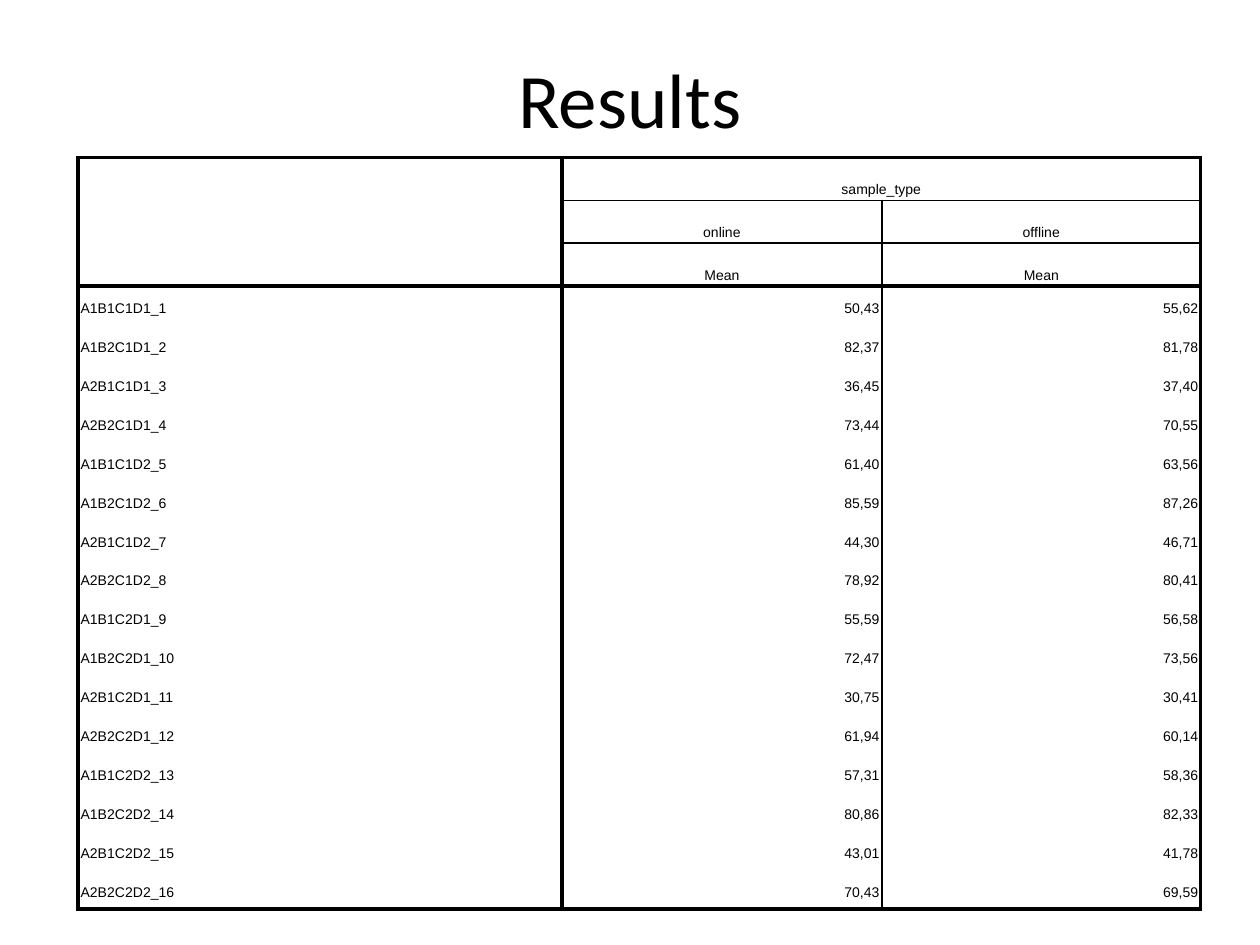
from dataclasses import dataclass
from itertools import product

from lxml.etree import SubElement
from pptx import Presentation
from pptx.dml.color import RGBColor
from pptx.enum.text import MSO_ANCHOR, PP_ALIGN
from pptx.oxml.ns import qn
from pptx.util import Inches, Pt

W, H = 10, 7.5
BLACK, WHITE = "000000", "FFFFFF"
THICK, THIN = 2.25, 1
COL_WIDTHS = (3.84, 2.54, 2.53)
HEADER_ROWS, HEADER_HEIGHT = 3, 0.33
TABLE_HEIGHT = 5.94


@dataclass
class Result:
    label: str
    online: str
    offline: str


ONLINE = ("50,43 82,37 36,45 73,44 61,40 85,59 44,30 78,92 "
          "55,59 72,47 30,75 61,94 57,31 80,86 43,01 70,43").split()
OFFLINE = ("55,62 81,78 37,40 70,55 63,56 87,26 46,71 80,41 "
           "56,58 73,56 30,41 60,14 58,36 82,33 41,78 69,59").split()
LABELS = [f"A{a}B{b}C{c}D{d}_{n}"
          for n, (c, d, a, b) in enumerate(product((1, 2), repeat=4), 1)]
RESULTS = [Result(*row) for row in zip(LABELS, ONLINE, OFFLINE)]
HEADERS = [("", "sample_type", ""), ("", "online", "offline"), ("", "Mean", "Mean")]
ROWS = HEADERS + [(r.label, r.online, r.offline) for r in RESULTS]


def color(value: str) -> RGBColor:
    return RGBColor.from_string(value)


def write(tf, text: str, *, size: float, font: str, align=PP_ALIGN.LEFT, spacing=None) -> None:
    p = tf.paragraphs[0]
    p.alignment = align
    if spacing:
        p.line_spacing = Pt(spacing)
    if text:
        r = p.add_run()
        r.text = text
        r.font.size, r.font.name, r.font.bold = Pt(size), font, False
        r.font.color.rgb = color(BLACK)


def horizontal_rule(y: int, col: int) -> float:
    if y in (0, HEADER_ROWS, len(ROWS)):
        return THICK
    return THIN if y < HEADER_ROWS and col else 0


def vertical_rule(x: int, row: int) -> float:
    if x == 2:
        return THIN if row else 0
    return THICK


def draw_border(cell, side: str, width: float) -> None:
    ln = SubElement(cell._tc.get_or_add_tcPr(), qn(f"a:ln{side}"), w=str(Pt(width)))
    if not width:
        SubElement(ln, qn("a:noFill"))
        return
    fill = SubElement(ln, qn("a:solidFill"))
    SubElement(fill, qn("a:srgbClr"), val=BLACK)


def draw_cell(cell, text: str, row: int, col: int) -> None:
    header = row < HEADER_ROWS
    cell.margin_left = cell.margin_right = cell.margin_top = cell.margin_bottom = Inches(0.02)
    cell.vertical_anchor = MSO_ANCHOR.BOTTOM if header else MSO_ANCHOR.TOP
    align = PP_ALIGN.CENTER if header else PP_ALIGN.RIGHT if col else PP_ALIGN.LEFT
    write(cell.text_frame, text, size=8, font="Arial", align=align, spacing=16)
    right = len(COL_WIDTHS) if cell.is_merge_origin else col + 1
    draw_border(cell, "L", vertical_rule(col, row))
    draw_border(cell, "R", vertical_rule(right, row))
    draw_border(cell, "T", horizontal_rule(row, col))
    draw_border(cell, "B", horizontal_rule(row + 1, col))
    cell.fill.solid()
    cell.fill.fore_color.rgb = color(WHITE)


def draw_title(s, text: str) -> None:
    sp = s.shapes.add_textbox(Inches(0.05 * W), 0, Inches(0.9 * W), Inches(1.55))
    tf = sp.text_frame
    tf.word_wrap = True
    tf.vertical_anchor = MSO_ANCHOR.MIDDLE
    write(tf, text, size=44, font="Calibri", align=PP_ALIGN.CENTER)


def draw_table(s) -> None:
    table = s.shapes.add_table(len(ROWS), len(COL_WIDTHS), Inches(0.62), Inches(1.25),
                               Inches(sum(COL_WIDTHS)), Inches(TABLE_HEIGHT)).table
    table.first_row = table.horz_banding = False
    for column, width in zip(table.columns, COL_WIDTHS):
        column.width = Inches(width)
    body_height = (TABLE_HEIGHT - HEADER_ROWS * HEADER_HEIGHT) / len(RESULTS)
    table.cell(0, 1).merge(table.cell(0, 2))
    for i, texts in enumerate(ROWS):
        table.rows[i].height = Inches(HEADER_HEIGHT if i < HEADER_ROWS else body_height)
        for j, text in enumerate(texts):
            draw_cell(table.cell(i, j), text, i, j)


def main() -> None:
    prs = Presentation()
    prs.slide_width, prs.slide_height = Inches(W), Inches(H)
    s = prs.slides.add_slide(prs.slide_layouts[6])
    draw_title(s, "Results")
    draw_table(s)
    prs.save("out.pptx")


if __name__ == "__main__":
    main()
